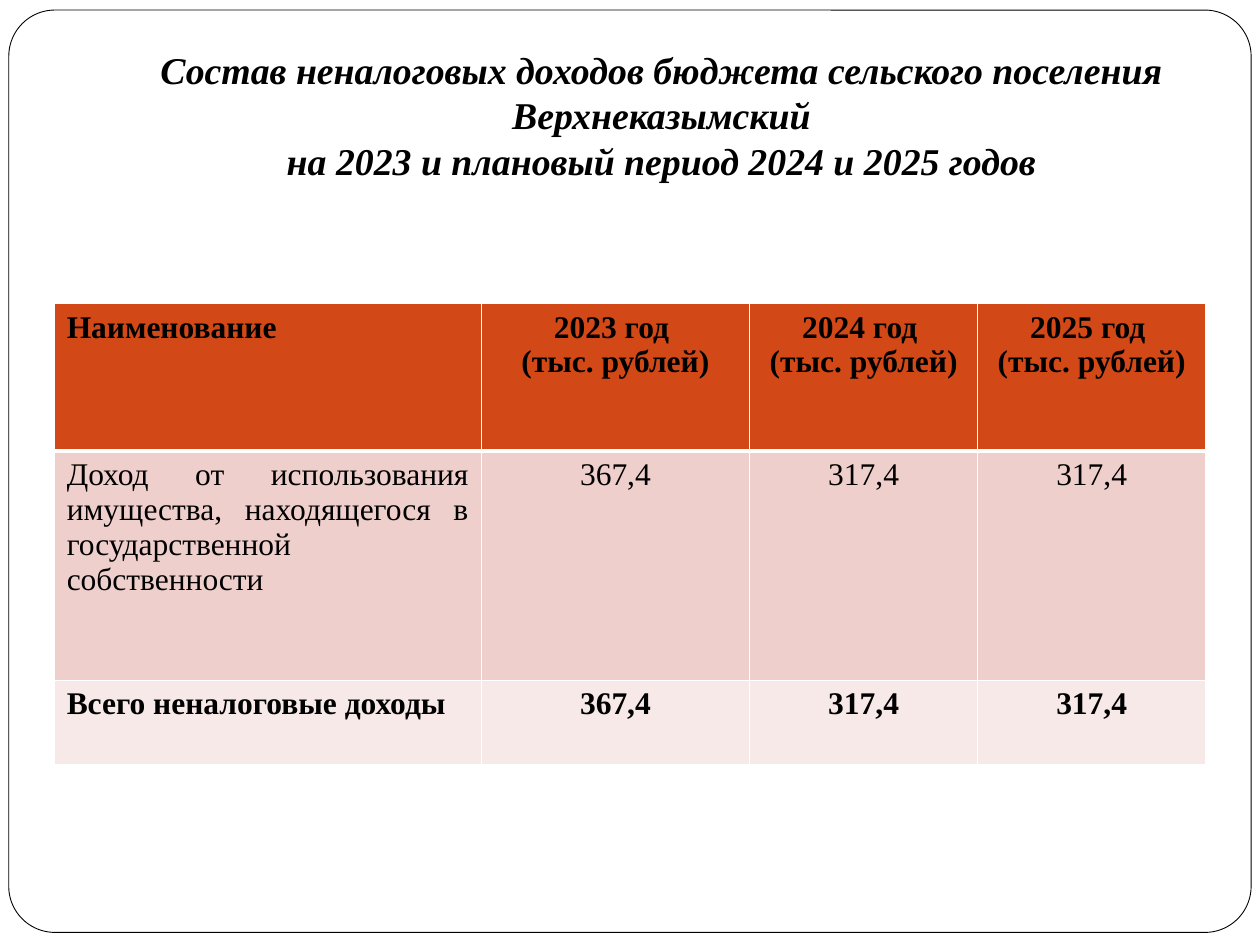
import dataclasses

import lxml.etree
import pptx
import pptx.dml.color
import pptx.enum.shapes
import pptx.enum.text
import pptx.oxml.ns
import pptx.util

Inches = pptx.util.Inches
Pt = pptx.util.Pt
Align = pptx.enum.text.PP_ALIGN

COLORS = {
    "ink": "000000",
    "paper": "FFFFFF",
    "header": "D34817",
    "income": "EFCFCC",
    "total": "F7E9E8",
}
FONT_NAME = "Times New Roman"
TITLE = (
    "Состав неналоговых доходов бюджета сельского поселения Верхнеказымский\v"
    " на 2023 и плановый период 2024 и 2025 годов "
)
YEARS = (2023, 2024, 2025)
COLUMN_WIDTHS = (3.39, 2.13, 1.81, 1.81)


@dataclasses.dataclass
class BudgetRow:
    label: str
    values: list[str]
    height: float
    fill: str
    bold: bool = True
    label_align: Align = Align.LEFT
    bottom_border: float = 1


ROWS = [
    BudgetRow(
        "Наименование",
        [f"{year} год \n(тыс. рублей)" for year in YEARS],
        1.17,
        "header",
        bottom_border=3,
    ),
    BudgetRow(
        "Доход от использования имущества, находящегося в государственной собственности ",
        ["367,4", "317,4", "317,4"],
        1.82,
        "income",
        bold=False,
        label_align=Align.JUSTIFY,
    ),
    BudgetRow("Всего неналоговые доходы", ["367,4", "317,4", "317,4"], 0.67, "total"),
]


def rgb(name: str) -> pptx.dml.color.RGBColor:
    return pptx.dml.color.RGBColor.from_string(COLORS[name])


def set_attributes(target: object, values: dict) -> None:
    for name, value in values.items():
        setattr(target, name, value)


def format_text(frame, align: Align, font: dict) -> None:
    for para in frame.paragraphs:
        para.alignment = align
        for span in para.runs:
            set_attributes(span.font, {"name": FONT_NAME, **font})
            span.font.color.rgb = rgb("ink")


def add_border(cell, side: str, width: float) -> None:
    qn = pptx.oxml.ns.qn
    properties = cell._tc.get_or_add_tcPr()
    line = lxml.etree.SubElement(properties, qn(f"a:ln{side}"), w=str(Pt(width)))
    fill = lxml.etree.SubElement(line, qn("a:solidFill"))
    lxml.etree.SubElement(fill, qn("a:srgbClr"), val=COLORS["paper"])


def add_frame(slide) -> None:
    frame = slide.shapes.add_shape(
        pptx.enum.shapes.MSO_SHAPE.ROUNDED_RECTANGLE,
        Inches(0.07), Inches(0.08), Inches(9.86), Inches(7.32),
    )
    frame.adjustments[0] = 0.05
    frame.shadow.inherit = False
    frame.fill.solid()
    frame.fill.fore_color.rgb = rgb("paper")
    frame.line.color.rgb = rgb("ink")
    frame.line.width = Pt(0.5)
    slide.shapes.title.element.addprevious(frame.element)


def add_title(slide) -> None:
    title = slide.shapes.title
    set_attributes(title, {
        "left": Inches(1), "top": Inches(0.3),
        "width": Inches(8.5), "height": Inches(1.25),
    })
    box = title.text_frame
    box.text = TITLE
    set_attributes(box, {
        "auto_size": pptx.enum.text.MSO_AUTO_SIZE.NONE,
        "word_wrap": True,
        "vertical_anchor": pptx.enum.text.MSO_ANCHOR.BOTTOM,
        "margin_left": Inches(0.1), "margin_right": Inches(0.1),
        "margin_top": Inches(0.05), "margin_bottom": Inches(0.1),
    })
    format_text(box, Align.CENTER, {"size": Pt(21.6), "bold": True, "italic": True})


def add_budget_table(slide, rows: list[BudgetRow]) -> None:
    table = slide.shapes.add_table(
        len(rows), len(COLUMN_WIDTHS),
        Inches(0.43), Inches(2.41),
        Inches(sum(COLUMN_WIDTHS)), Inches(sum(row.height for row in rows)),
    ).table
    for column, width in zip(table.columns, COLUMN_WIDTHS):
        column.width = Inches(width)
    top_border = 1
    for row_index, row in enumerate(rows):
        table.rows[row_index].height = Inches(row.height)
        borders = {"L": 1, "R": 1, "T": top_border, "B": row.bottom_border}
        for column_index, text in enumerate([row.label, *row.values]):
            cell = table.cell(row_index, column_index)
            cell.text = text
            align = Align.CENTER if column_index else row.label_align
            format_text(cell.text_frame, align, {"size": Pt(18), "bold": row.bold})
            for side, width in borders.items():
                add_border(cell, side, width)
            cell.fill.solid()
            cell.fill.fore_color.rgb = rgb(row.fill)
        top_border = row.bottom_border


def main() -> None:
    deck = pptx.Presentation()
    set_attributes(deck, {"slide_width": Inches(10), "slide_height": Inches(7.5)})
    page = deck.slides.add_slide(deck.slide_layouts.get_by_name("Title Only"))
    add_frame(page)
    add_title(page)
    add_budget_table(page, ROWS)
    deck.save("out.pptx")


if __name__ == "__main__":
    main()
